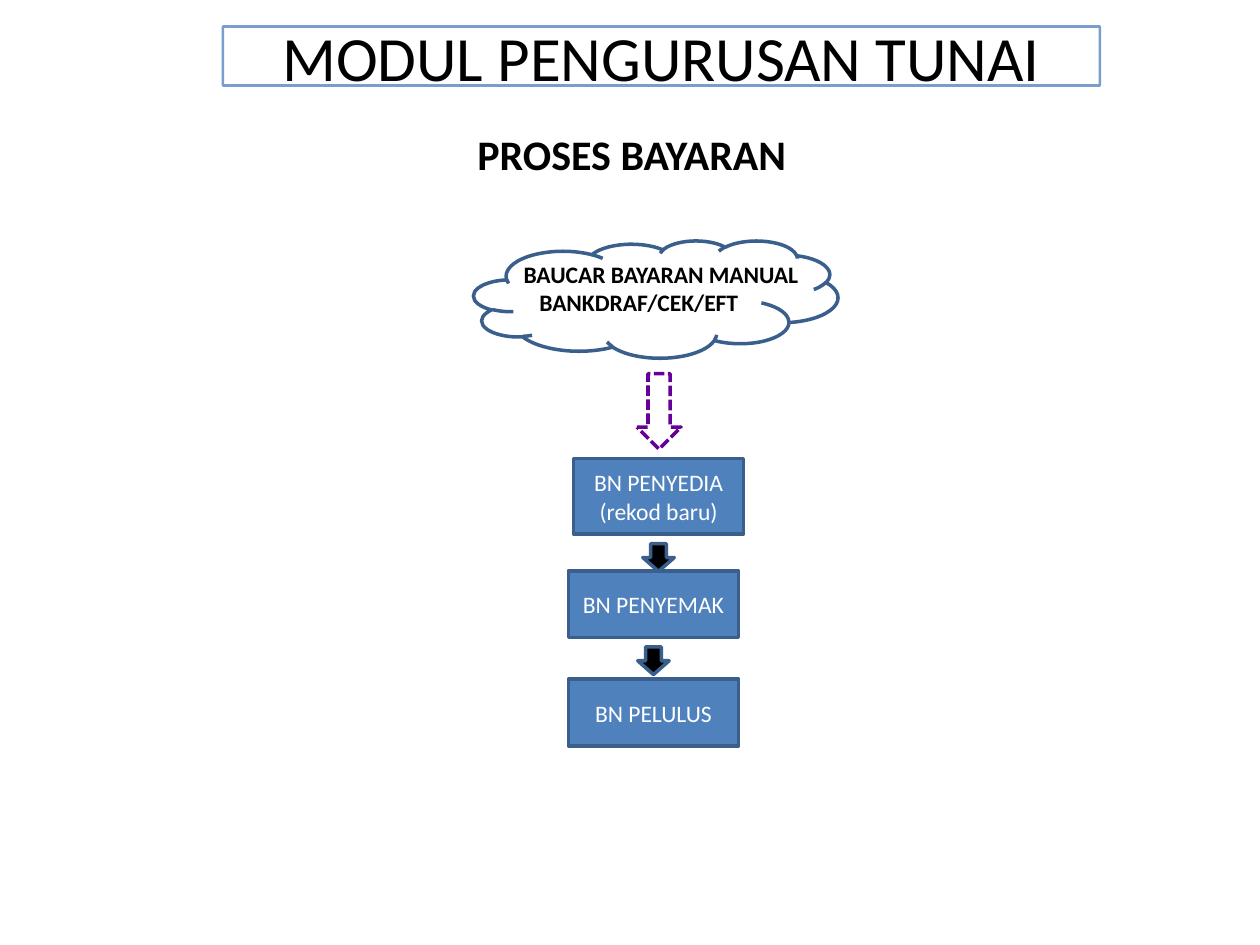
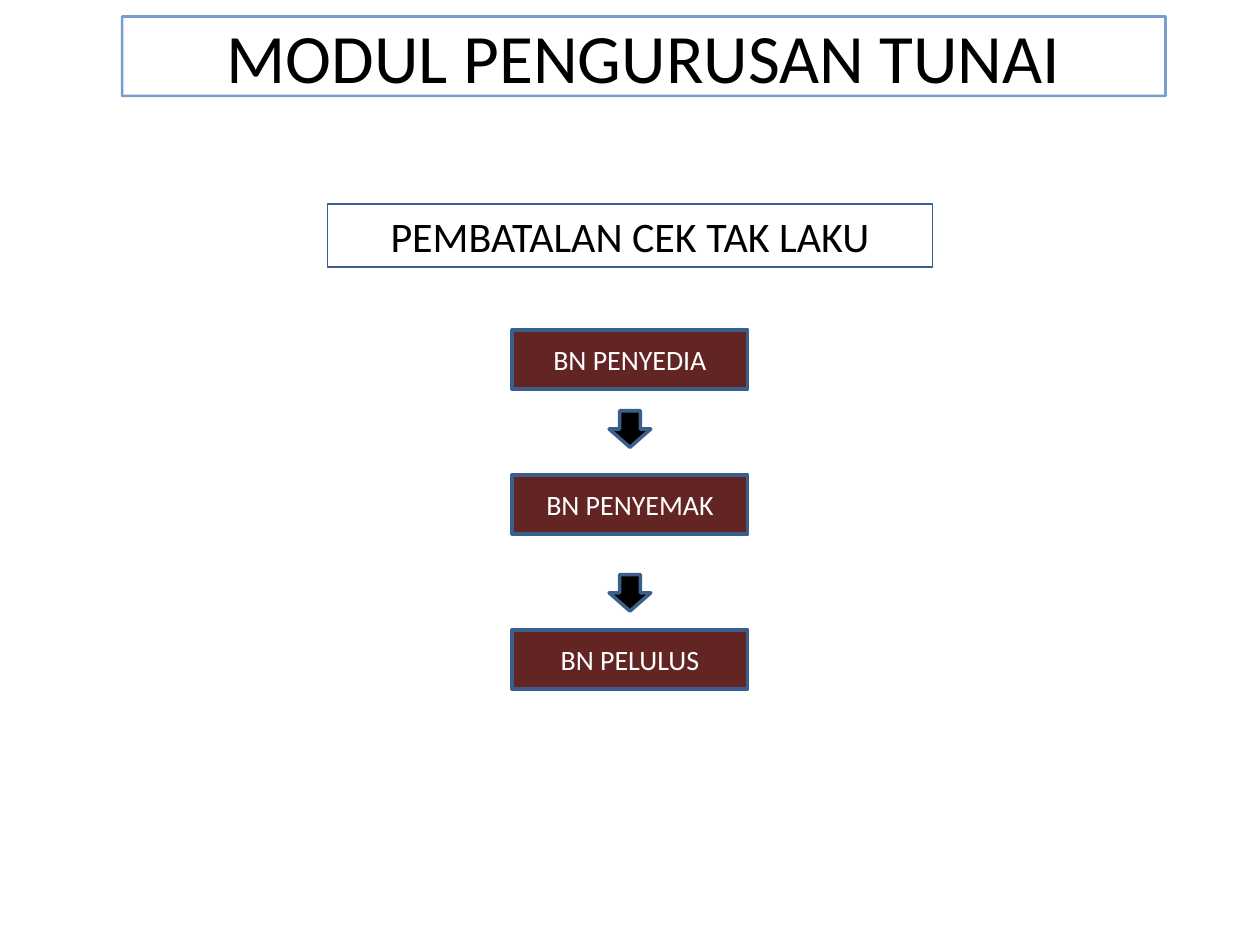
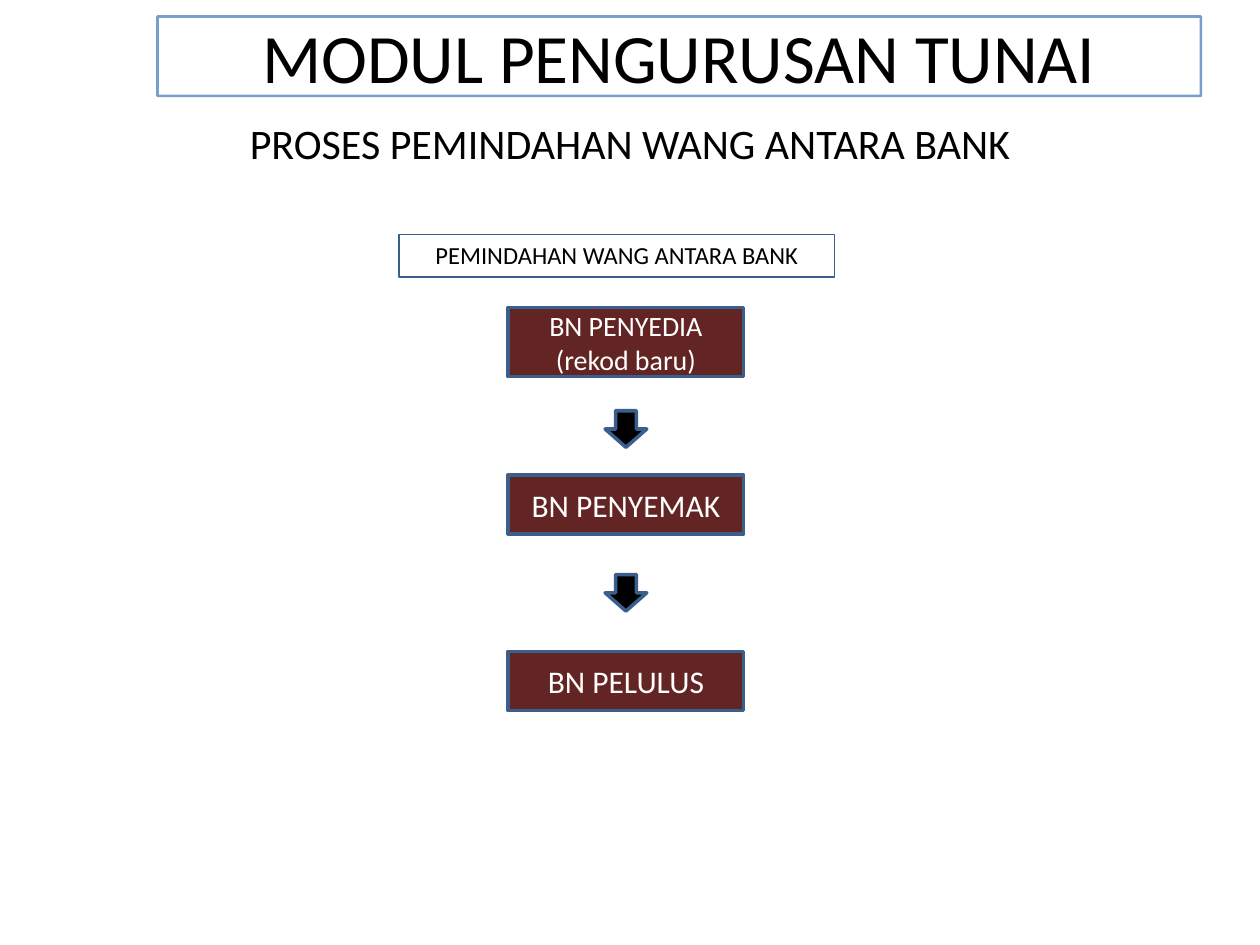
from dataclasses import dataclass

from lxml.etree import SubElement
from pptx import Presentation
from pptx.dml.color import RGBColor
from pptx.enum.dml import MSO_LINE_DASH_STYLE as Dash
from pptx.enum.shapes import MSO_SHAPE as Shape
from pptx.enum.text import MSO_ANCHOR as Anchor, MSO_AUTO_SIZE as AutoSize, PP_ALIGN as Align
from pptx.oxml.ns import qn
from pptx.util import Pt


@dataclass(frozen=True)
class Theme:
    font: str = "Calibri"
    black: str = "000000"
    white: str = "FFFFFF"
    blue: str = "4F81BD"
    maroon: str = "632523"
    edge: str = "3A5F8C"
    purple: str = "660099"
    heading: float = 24
    note: float = 14
    small: float = 13.5
    step: float = 16
    large: float = 18


theme = Theme()


def write(shape, text, size, color=theme.black, bold=False, align=Align.CENTER, anchor=Anchor.MIDDLE):
    """Fill a shape with text, one paragraph for each line."""
    frame = shape.text_frame
    frame.text = text
    frame.word_wrap = True
    frame.auto_size = AutoSize.NONE
    frame.vertical_anchor = anchor
    for para in frame.paragraphs:
        para.alignment = align
        font = para.font
        font.name, font.size, font.bold = theme.font, Pt(size), bold
        font.color.rgb = RGBColor.from_string(color)


def add_block(page, kind, left, top, width, height, fill=None, edge=theme.edge, weight=2):
    block = page.shapes.add_shape(kind, Pt(left), Pt(top), Pt(width), Pt(height))
    block.shadow.inherit = False
    if fill:
        block.fill.solid()
        block.fill.fore_color.rgb = RGBColor.from_string(fill)
    else:
        block.fill.background()
    block.line.color.rgb = RGBColor.from_string(edge)
    block.line.width = Pt(weight)
    return block


deck = Presentation()
deck.slide_width, deck.slide_height = Pt(720), Pt(540)

# Title frame of each page: left, top, width, height, type size
titles = [
    (127.4, 15.1, 501.1, 33.8, 36),
    (69.8, 9.4, 596.2, 45.4, 39.6),
    (90, 9.4, 596.2, 45.4, 39.6),
]
pages = []
for left, top, width, height, size in titles:
    page = deck.slides.add_slide(deck.slide_layouts.get_by_name("Title Only"))
    title = page.shapes.title
    title.left, title.top, title.width, title.height = Pt(left), Pt(top), Pt(width), Pt(height)
    write(title, "MODUL PENGURUSAN TUNAI", size)
    title.line.color.rgb = RGBColor.from_string(theme.blue)
    title.line.width = Pt(1.5)
    SubElement(title.line._ln.find(".//" + qn("a:srgbClr")), qn("a:alpha"), val="76000")
    pages.append(page)
payment, cancelled, transfer = pages

# Headings without a frame
for page, text, left, top, width, bold, align in [
    (payment, "PROSES BAYARAN", 265.7, 69.8, 208, True, Align.LEFT),
    (transfer, "PROSES PEMINDAHAN WANG ANTARA BANK", 130.3, 63.4, 459.4, False, Align.CENTER),
]:
    box = page.shapes.add_textbox(Pt(left), Pt(top), Pt(width), Pt(36))
    write(box, text, theme.heading, bold=bold, align=align, anchor=Anchor.TOP)

# Framed captions
for page, text, left, top, width, height, size in [
    (cancelled, "PEMBATALAN CEK TAK LAKU", 187.2, 116.6, 345.6, 36, theme.heading),
    (transfer, "PEMINDAHAN WANG ANTARA BANK", 228, 133.9, 249.1, 24.5, theme.note),
]:
    caption = add_block(page, Shape.RECTANGLE, left, top, width, height, weight=0.75)
    write(caption, text, size, anchor=Anchor.TOP)

# Cloud that starts the payment process
add_block(payment, Shape.CLOUD, 270.7, 137.5, 208.1, 67)
voucher = payment.shapes.add_textbox(Pt(270.7), Pt(144.7), Pt(208), Pt(40.3))
write(voucher, "BAUCAR BAYARAN MANUAL\nBANKDRAF/CEK/EFT", theme.small,
      bold=True, align=Align.LEFT, anchor=Anchor.TOP)
voucher.text_frame.margin_left, voucher.text_frame.margin_right = Pt(28.5), 0
voucher.text_frame.paragraphs[1]._p.get_or_add_pPr().set("marL", str(Pt(9)))

start_arrow = add_block(payment, Shape.DOWN_ARROW, 364, 213.5, 25.2, 43.2, edge=theme.purple)
start_arrow.line.dash_style = Dash.SQUARE_DOT

# Steps: page, text, centre, top, width, height, fill, type size
new_record = "BN PENYEDIA\n(rekod baru)"
steps = [
    (payment, new_record, 376.3, 262.1, 97.2, 43.2, theme.blue, theme.small),
    (payment, "BN PENYEMAK", 373.4, 326.2, 97.2, 38.2, theme.blue, theme.small),
    (payment, "BN PELULUS", 373.4, 388.1, 97.2, 38.2, theme.blue, theme.small),
    (cancelled, "BN PENYEDIA", 360, 188.6, 134.6, 33.8, theme.maroon, theme.step),
    (cancelled, "BN PENYEMAK", 360, 271.4, 134.6, 33.8, theme.maroon, theme.step),
    (cancelled, "BN PELULUS", 360, 360, 134.6, 33.8, theme.maroon, theme.step),
    (transfer, new_record, 357.7, 175.7, 134.6, 39.6, theme.maroon, theme.step),
    (transfer, "BN PENYEMAK", 357.7, 271.4, 134.6, 33.8, theme.maroon, theme.large),
    (transfer, "BN PELULUS", 357.7, 372.2, 134.6, 33.8, theme.maroon, theme.large),
]
for page, text, centre, top, width, height, fill, size in steps:
    step = add_block(page, Shape.RECTANGLE, centre - width / 2, top, width, height, fill)
    write(step, text, size, theme.white)

# Arrows between steps: page, centres, tops, width, height
for page, centres, tops, width, height in [
    (payment, (376.3, 373.4), (310.7, 369.7), 18, 15.8),
    (cancelled, (360, 360), (234.7, 328.3), 23.8, 20.9),
    (transfer, (357.7, 357.7), (234.7, 328.3), 23.8, 20.9),
]:
    for centre, top in zip(centres, tops):
        add_block(page, Shape.DOWN_ARROW, centre - width / 2, top, width, height, theme.black)

deck.save("out.pptx")
